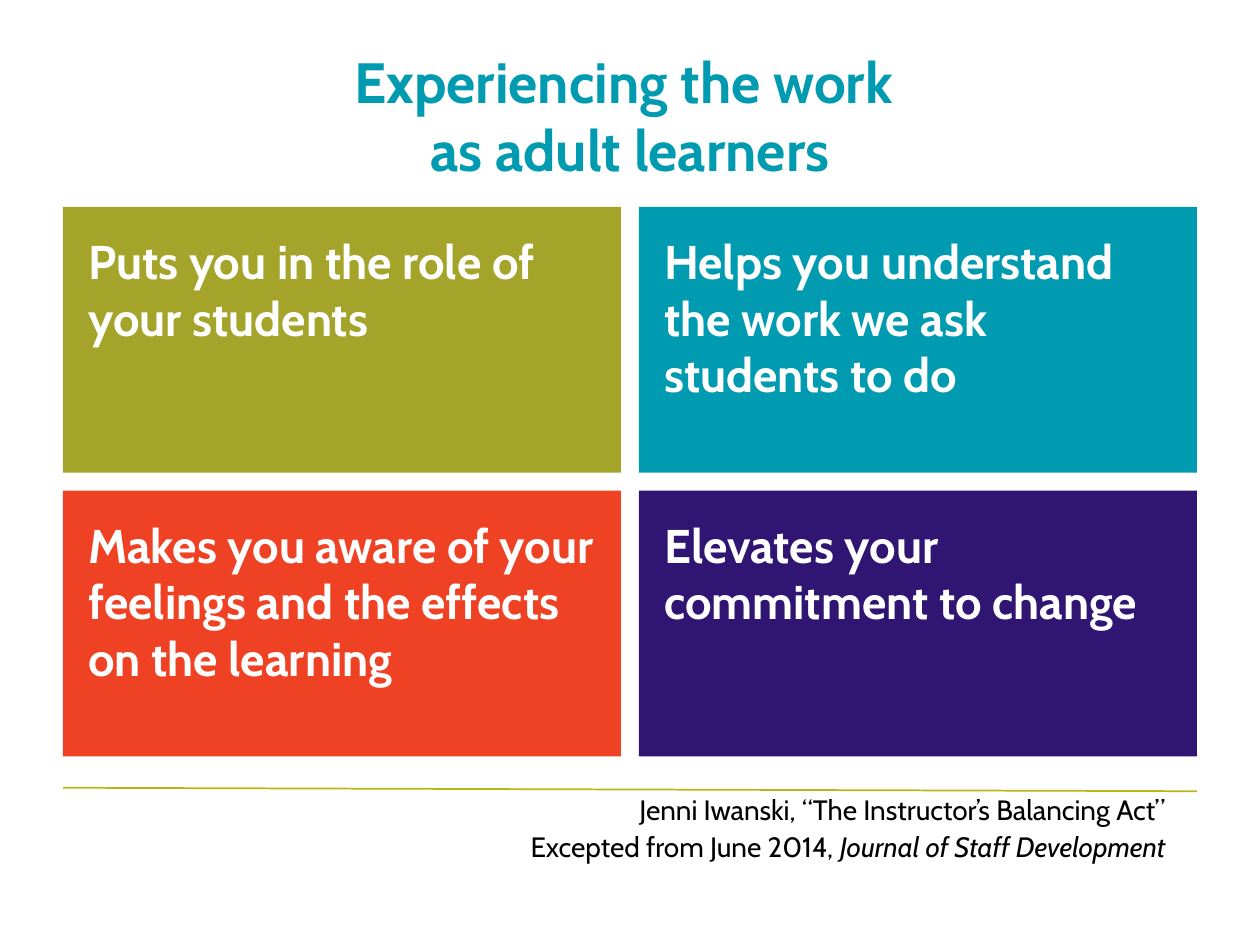
from dataclasses import dataclass

from lxml import etree
from pptx import Presentation
from pptx import util as u
from pptx.dml.color import RGBColor
from pptx.enum import shapes, text
from pptx.oxml import ns


@dataclass(frozen=True)
class Theme:
    font: str = "Cabin"
    teal: str = "009BB0"
    olive: str = "A5A42A"
    red: str = "EF4123"
    violet: str = "301672"
    rule: str = "B8B615"
    white: str = "FFFFFF"
    black: str = "000000"
    title: float = 32.4
    body: float = 27
    source: float = 16


@dataclass(frozen=True)
class Box:
    left: float
    top: float
    width: float
    height: float

    def place(self) -> tuple:
        return tuple(u.Cm(n) for n in (self.left, self.top, self.width, self.height))


@dataclass(frozen=True)
class Card:
    words: str
    fill: str


THEME = Theme()
LEFT, WIDE = 1.27, 22.86
CARD = Box(LEFT, 4.17, 11.25, 5.36)
GAP = 0.36
COLS = 2
CARDS = (
    Card("Puts you in the role of your students", THEME.olive),
    Card("Helps you understand the work we ask students to do", THEME.teal),
    Card("Makes you aware of your feelings and the effects on the learning", THEME.red),
    Card("Elevates your commitment to change", THEME.violet),
)


def color(code: str) -> RGBColor:
    return RGBColor.from_string(code)


def set_frame(frame, side: float, edge: float, anchor) -> None:
    frame.word_wrap = True
    frame.auto_size = text.MSO_AUTO_SIZE.NONE
    frame.vertical_anchor = anchor
    frame.margin_left = frame.margin_right = u.Cm(side)
    frame.margin_top = frame.margin_bottom = u.Cm(edge)


def add_run(para, words: str, size: float, code: str,
            bold: bool = False, slant: bool = False) -> None:
    run = para.add_run()
    run.text = words
    font = run.font
    font.name, font.size = THEME.font, u.Pt(size)
    font.bold, font.italic = bold, slant
    font.color.rgb = color(code)


def add_rule(slide) -> None:
    line = slide.shapes.add_connector(
        shapes.MSO_CONNECTOR.STRAIGHT,
        u.Cm(LEFT), u.Cm(15.88), u.Cm(LEFT + WIDE), u.Cm(15.95))
    line.line.color.rgb = color(THEME.rule)
    line.line.width = u.Pt(1)
    etree.SubElement(line._element.spPr, ns.qn("a:effectLst"))


def add_title(slide) -> None:
    box = slide.shapes.add_textbox(*Box(LEFT, 0.86, WIDE, 2.9).place())
    set_frame(box.text_frame, 0.25, 0.13, text.MSO_ANCHOR.MIDDLE)
    para = box.text_frame.paragraphs[0]
    para.alignment = text.PP_ALIGN.CENTER
    add_run(para, "Experiencing the work ", THEME.title, THEME.teal, bold=True)
    para.add_line_break()
    add_run(para, "as adult learners", THEME.title, THEME.teal, bold=True)


def add_card(slide, card: Card, spot: Box) -> None:
    shape = slide.shapes.add_shape(shapes.MSO_SHAPE.RECTANGLE, *spot.place())
    shape.shadow.inherit = False
    shape.fill.solid()
    shape.fill.fore_color.rgb = color(card.fill)
    shape.line.fill.background()
    set_frame(shape.text_frame, 0.51, 0.51, text.MSO_ANCHOR.TOP)
    para = shape.text_frame.paragraphs[0]
    para.alignment = text.PP_ALIGN.LEFT
    add_run(para, card.words, THEME.body, THEME.white, bold=True)


def add_source(slide) -> None:
    box = slide.shapes.add_textbox(*Box(10.31, 15.98, 13.44, 1.57).place())
    frame = box.text_frame
    set_frame(frame, 0.25, 0.13, text.MSO_ANCHOR.TOP)
    first, second = frame.paragraphs[0], frame.add_paragraph()
    for para in (first, second):
        para.alignment = text.PP_ALIGN.RIGHT
        para.line_spacing = 0.8
    second.space_before = u.Pt(5.9)
    size, ink = THEME.source, THEME.black
    add_run(first, "Jenni Iwanski, “The Instructor’s Balancing Act”", size, ink)
    add_run(second, "Excepted from June 2014, ", size, ink)
    add_run(second, "Journal of Staff Development", size, ink, slant=True)


def main() -> None:
    deck = Presentation()
    deck.slide_width, deck.slide_height = u.Cm(25.4), u.Cm(19.05)
    slide = deck.slides.add_slide(deck.slide_layouts[6])

    # Rule and heading
    add_rule(slide)
    add_title(slide)

    # Grid of cards
    for i, card in enumerate(CARDS):
        row, col = divmod(i, COLS)
        spot = Box(CARD.left + col * (CARD.width + GAP),
                   CARD.top + row * (CARD.height + GAP),
                   CARD.width, CARD.height)
        add_card(slide, card, spot)

    # Citation
    add_source(slide)
    deck.save("out.pptx")


if __name__ == "__main__":
    main()
